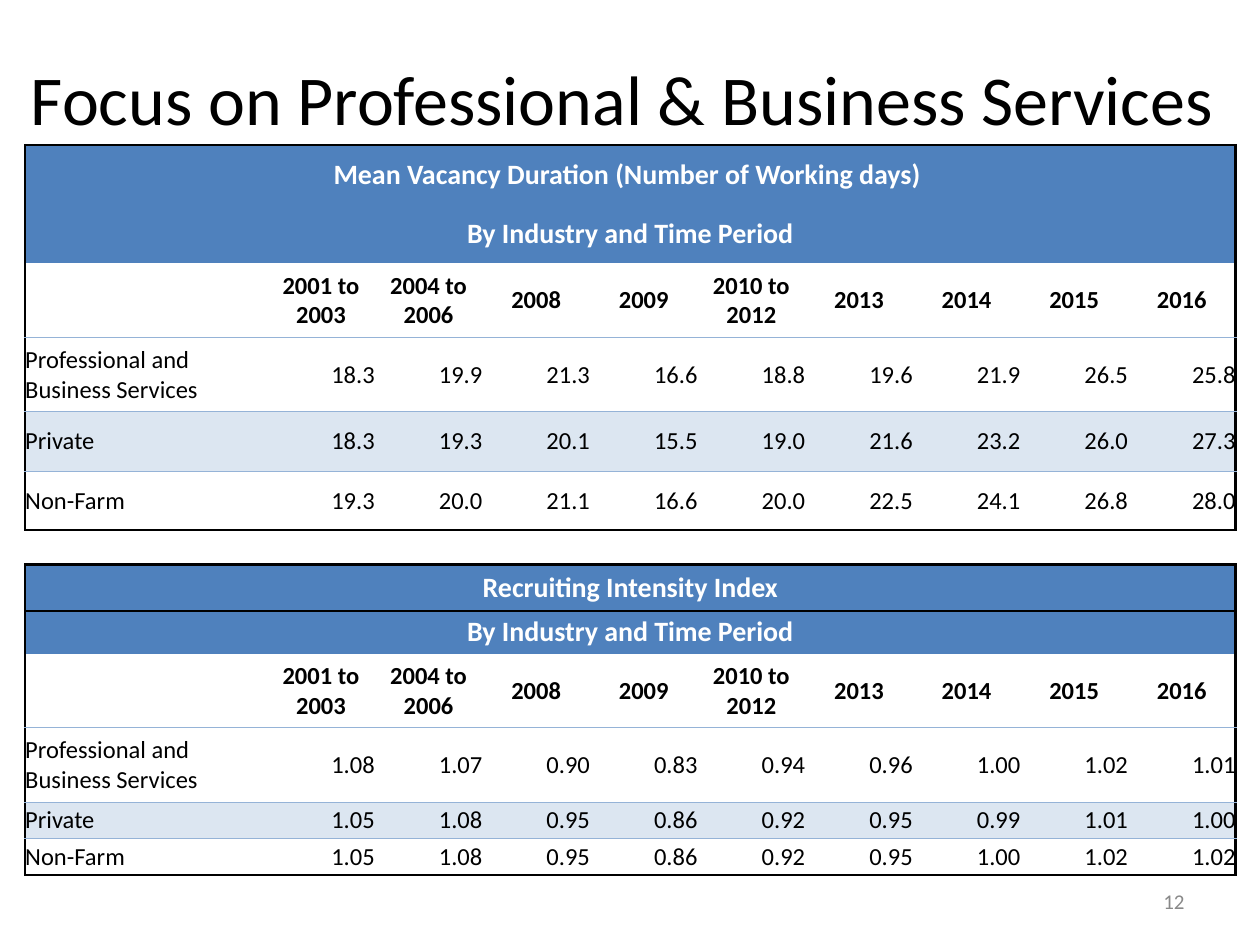
from lxml.etree import SubElement
from pptx import Presentation
from pptx.dml.color import RGBColor
from pptx.enum.text import MSO_ANCHOR, MSO_AUTO_SIZE, PP_ALIGN
from pptx.oxml.ns import qn
from pptx.util import Pt

HUES = {
    "ink": "000000", "white": "FFFFFF", "head": "4F81BD",
    "band": "DCE6F1", "rule": "95B3D7", "gray": "898989",
}
THICK = ("ink", 1.5)
THIN = ("rule", 0.5)
PLAIN_STYLE = "{2D5ABB26-0587-4C30-8999-92F81FD0307C}"
YEARS = ["2001 to 2003", "2004 to 2006", "2008", "2009", "2010 to 2012",
         "2013", "2014", "2015", "2016"]
LABELS = ["Professional and Business Services", "Private", "Non-Farm"]
BLOCKS = [
    ("Mean Vacancy Duration (Number of Working days) ", [
        "18.3 19.9 21.3 16.6 18.8 19.6 21.9 26.5 25.8",
        "18.3 19.3 20.1 15.5 19.0 21.6 23.2 26.0 27.3",
        "19.3 20.0 21.1 16.6 20.0 22.5 24.1 26.8 28.0"]),
    ("Recruiting Intensity Index", [
        "1.08 1.07 0.90 0.83 0.94 0.96 1.00 1.02 1.01",
        "1.05 1.08 0.95 0.86 0.92 0.95 0.99 1.01 1.00",
        "1.05 1.08 0.95 0.86 0.92 0.95 1.00 1.02 1.02"]),
]
WIDTHS = [138.3] + [61.5] * 9
HEIGHTS = [33.9, 33.9, 42.4, 42.4, 33.9, 33.9, 19.5,
           26.6, 24.4, 42.4, 42.4, 21, 21]
LAST = len(WIDTHS) - 1
GAP_ROW = 6


def shade(name):
    return RGBColor.from_string(HUES[name])


def write(frame, text, size=14, hue="ink", bold=False, align=PP_ALIGN.LEFT):
    para = frame.paragraphs[0]
    para.alignment = align
    if not text:
        para._p.get_or_add_endParaRPr().set("sz", str(size * 100))
        return
    run = para.add_run()
    run.text = text
    font = run.font
    font.name, font.size, font.bold = "Calibri", Pt(size), bold
    font.color.rgb = shade(hue)


def edge(cell, **sides):
    props = cell._tc.get_or_add_tcPr()
    for side in "LRTB":
        if sides.get(side):
            hue, width = sides[side]
            line = SubElement(props, qn("a:ln" + side), w=str(Pt(width)))
            fill = SubElement(line, qn("a:solidFill"))
            SubElement(fill, qn("a:srgbClr"), val=HUES[hue])


def style(cell, fill=None, **sides):
    cell.margin_left = cell.margin_right = 0
    cell.margin_top = cell.margin_bottom = 0
    cell.vertical_anchor = MSO_ANCHOR.MIDDLE
    edge(cell, **sides)
    if fill:
        cell.fill.solid()
        cell.fill.fore_color.rgb = shade(fill)
    else:
        cell.fill.background()


def put_row(grid, row, texts, fill=None, top=None, base=None, **form):
    for col, text in enumerate(texts):
        cell = grid.cell(row, col)
        left = THICK if col == 0 else None
        right = THICK if col == LAST else None
        style(cell, fill, L=left, R=right, T=top, B=base)
        align = PP_ALIGN.LEFT if col == 0 else PP_ALIGN.RIGHT
        write(cell.text_frame, text, **{"align": align, **form})


def put_head(grid, row, text, top=None):
    for col in range(LAST + 1):
        style(grid.cell(row, col), "head", L=THICK if col == 0 else None,
              R=THICK if col in (0, LAST) else None, T=top)
    first = grid.cell(row, 0)
    first.merge(grid.cell(row, LAST))
    write(first.text_frame, text, size=16, hue="white", bold=True,
          align=PP_ALIGN.CENTER)


def put_block(grid, start, head, lines):
    put_head(grid, start, head, top=THICK)
    put_head(grid, start + 1, "By Industry and Time Period")
    put_row(grid, start + 2, [""] + YEARS, base=THIN, bold=True,
            align=PP_ALIGN.CENTER)
    looks = [(None, THIN), ("band", THIN), (None, THICK)]
    for step, (label, line, look) in enumerate(zip(LABELS, lines, looks)):
        fill, base = look
        put_row(grid, start + 3 + step, [label] + line.split(), fill,
                top=THIN, base=base)


def put_gap(grid, row):
    for col in range(LAST + 1):
        cell = grid.cell(row, col)
        style(cell, T=THICK, B=THICK)
        write(cell.text_frame, "", size=12)


def put_grid(slide):
    frame = slide.shapes.add_table(
        len(HEIGHTS), len(WIDTHS), Pt(14.4), Pt(82.8),
        Pt(sum(WIDTHS)), Pt(sum(HEIGHTS)))
    grid = frame.table
    grid.first_row = grid.horz_banding = False
    grid._tbl.tblPr.find(qn("a:tableStyleId")).text = PLAIN_STYLE
    for col, width in zip(grid.columns, WIDTHS):
        col.width = Pt(width)
    for row, height in zip(grid.rows, HEIGHTS):
        row.height = Pt(height)
    for start, block in zip((0, GAP_ROW + 1), BLOCKS):
        put_block(grid, start, *block)
    put_gap(grid, GAP_ROW)


def put_title(slide):
    title = slide.shapes.title
    title.left, title.top = Pt(0), Pt(28.8)
    title.width, title.height = Pt(720), Pt(54)
    frame = title.text_frame
    frame.auto_size = MSO_AUTO_SIZE.NONE
    frame.vertical_anchor = MSO_ANCHOR.MIDDLE
    write(frame, "Focus on Professional & Business Services ", size=40,
          align=PP_ALIGN.CENTER)


def put_number(slide):
    box = slide.shapes.add_textbox(Pt(516), Pt(500.4), Pt(168), Pt(28.8))
    frame = box.text_frame
    frame.word_wrap = True
    frame.vertical_anchor = MSO_ANCHOR.MIDDLE
    write(frame, "12", size=12, hue="gray", align=PP_ALIGN.RIGHT)


def main():
    deck = Presentation()
    deck.slide_width, deck.slide_height = Pt(720), Pt(540)
    slide = deck.slides.add_slide(deck.slide_layouts[5])
    put_title(slide)
    put_grid(slide)
    put_number(slide)
    deck.save("out.pptx")


if __name__ == "__main__":
    main()
